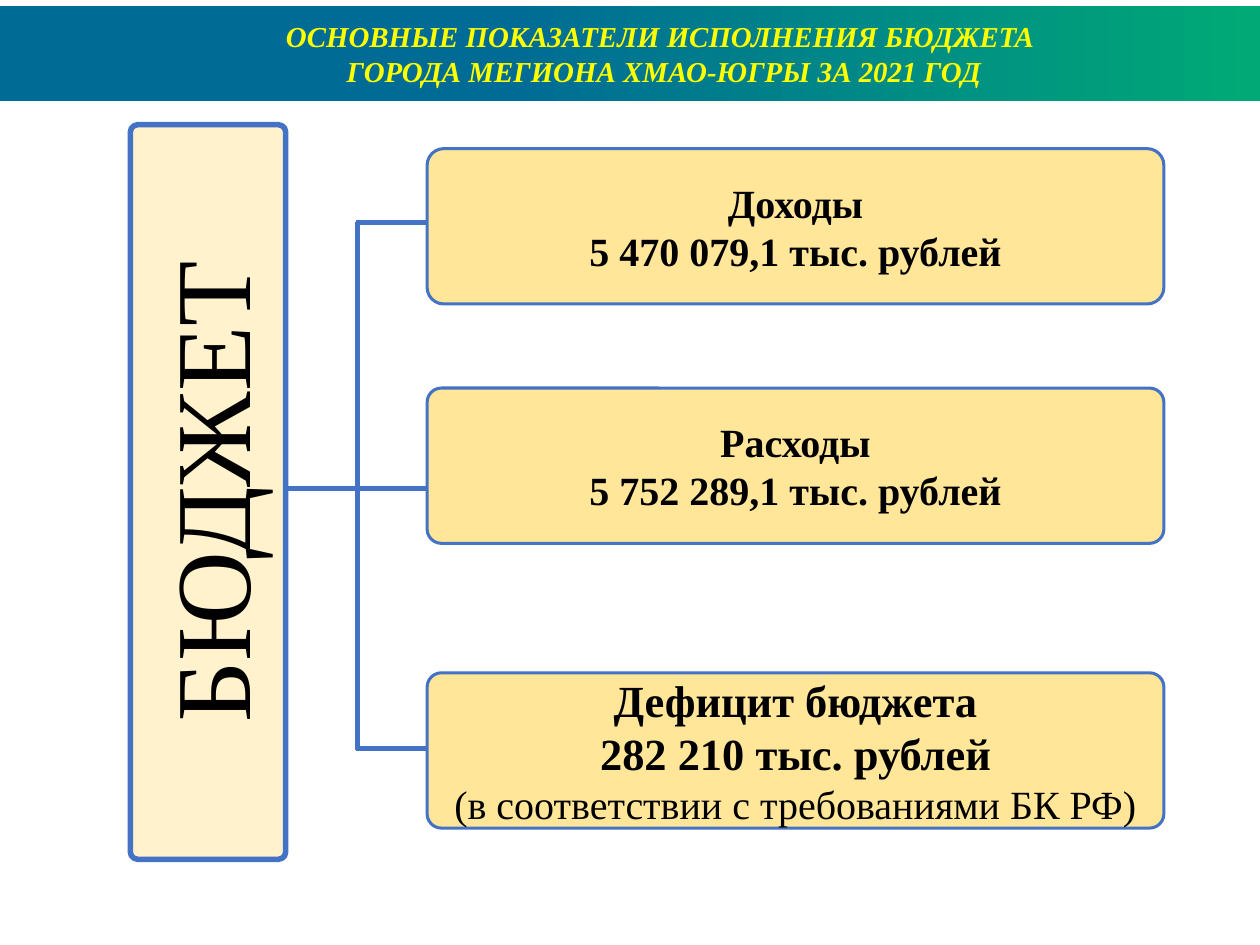
from dataclasses import dataclass

from lxml.etree import SubElement
from pptx import Presentation
from pptx.dml.color import RGBColor
from pptx.enum.shapes import MSO_CONNECTOR, MSO_SHAPE
from pptx.enum.text import MSO_ANCHOR, PP_ALIGN
from pptx.oxml.ns import qn
from pptx.shapes.autoshape import Shape
from pptx.slide import Slide
from pptx.text.text import TextFrame, _Paragraph
from pptx.util import Cm, Pt

FONT = "Times New Roman"
BLACK = RGBColor(0x00, 0x00, 0x00)
YELLOW = RGBColor(0xFF, 0xFF, 0x00)
BLUE = RGBColor(0x44, 0x72, 0xC4)
CREAM = RGBColor(0xFF, 0xF2, 0xCC)
SAND = RGBColor(0xFF, 0xE6, 0x99)
HEADER_BLUE = RGBColor(0x00, 0x6C, 0x95)
HEADER_GREEN = RGBColor(0x00, 0xA9, 0x76)

CARD_LEFT, CARD_WIDTH, CARD_HEIGHT = 13.56, 23.39, 4.93
BUDGET_LEFT, BUDGET_WIDTH = 4.14, 4.93
TRUNK_X = 11.35


@dataclass
class Line:
    text: str
    size: int
    bold: bool = True


@dataclass
class Card:
    top: float
    branch_y: float
    radius: float
    lines: list[Line]


CARDS = [
    Card(4.72, 7.06, 0.107, [Line("Доходы", 36), Line("5 470 079,1 тыс. рублей", 36)]),
    Card(12.32, 15.52, 0.092, [Line("Расходы", 36), Line("5 752 289,1 тыс. рублей", 36)]),
    Card(21.36, 23.77, 0.092, [
        Line("Дефицит бюджета", 40),
        Line("282 210 тыс. рублей", 40),
        Line("(в соответствии с требованиями БК РФ)", 36, bold=False),
    ]),
]
TITLE = ["ОСНОВНЫЕ ПОКАЗАТЕЛИ ИСПОЛНЕНИЯ БЮДЖЕТА ", "ГОРОДА МЕГИОНА ХМАО-ЮГРЫ ЗА 2021 ГОД"]


def add_run(p: _Paragraph, line: Line, color: RGBColor, italic: bool = False) -> None:
    r = p.add_run()
    r.text = line.text
    r.font.name = FONT
    r.font.size = Pt(line.size)
    r.font.bold = line.bold
    r.font.italic = italic
    r.font.color.rgb = color


def write_lines(tf: TextFrame, lines: list[Line]) -> None:
    tf.word_wrap = True
    tf.vertical_anchor = MSO_ANCHOR.MIDDLE
    for i, line in enumerate(lines):
        p = tf.add_paragraph() if i else tf.paragraphs[0]
        p.alignment = PP_ALIGN.CENTER
        add_run(p, line, BLACK)


def add_rounded_box(s: Slide, left: float, top: float, width: float, height: float,
                    radius: float, fill: RGBColor, border: float, lines: list[Line]) -> Shape:
    sp = s.shapes.add_shape(MSO_SHAPE.ROUNDED_RECTANGLE, Cm(left), Cm(top), Cm(width), Cm(height))
    sp.shadow.inherit = False
    sp.adjustments[0] = radius
    sp.fill.solid()
    sp.fill.fore_color.rgb = fill
    sp.line.color.rgb = BLUE
    sp.line.width = Pt(border)
    write_lines(sp.text_frame, lines)
    return sp


def add_link(s: Slide, x1: float, y1: float, x2: float, y2: float) -> None:
    link = s.shapes.add_connector(MSO_CONNECTOR.STRAIGHT, Cm(x1), Cm(y1), Cm(x2), Cm(y2))
    link.line.color.rgb = BLUE
    link.line.width = Pt(4.5)
    SubElement(link._element.spPr, qn("a:effectLst"))


def add_header(s: Slide) -> None:
    band = s.shapes.add_shape(MSO_SHAPE.RECTANGLE, 0, Cm(0.2), Cm(40), Cm(3))
    band.shadow.inherit = False
    band.line.fill.background()
    band.fill.gradient()
    band.fill.gradient_angle = 0
    stops = [(0.4, HEADER_BLUE), (1, HEADER_GREEN)]
    for stop, (position, color) in zip(band.fill.gradient_stops, stops):
        stop.position = position
        stop.color.rgb = color

    tf = s.shapes.add_textbox(Cm(2.49), Cm(0.48), Cm(37.19), Cm(2.49)).text_frame
    tf.word_wrap = True
    p = tf.paragraphs[0]
    p.alignment = PP_ALIGN.CENTER
    for i, text in enumerate(TITLE):
        if i:
            p.add_line_break()
        add_run(p, Line(text, 26), YELLOW, italic=True)


def main() -> None:
    prs = Presentation()
    prs.slide_width, prs.slide_height = Cm(40), Cm(30)
    s = prs.slides.add_slide(prs.slide_layouts[6])
    add_header(s)

    budget = add_rounded_box(s, BUDGET_LEFT, 3.96, BUDGET_WIDTH, 23.32, 0.047, CREAM, 5,
                             [Line("БЮДЖЕТ", 96, bold=False)])
    budget.text_frame._txBody.bodyPr.set("vert", "vert270")

    for card in CARDS:
        add_rounded_box(s, CARD_LEFT, card.top, CARD_WIDTH, CARD_HEIGHT,
                        card.radius, SAND, 2.75, card.lines)
    for card in CARDS:
        add_link(s, CARD_LEFT, card.branch_y, TRUNK_X - 0.05, card.branch_y)
    first, middle, last = (card.branch_y for card in CARDS)
    add_link(s, TRUNK_X, first, TRUNK_X, last + 0.05)
    add_link(s, TRUNK_X, middle, BUDGET_LEFT + BUDGET_WIDTH, middle)
    prs.save("out.pptx")


if __name__ == "__main__":
    main()
